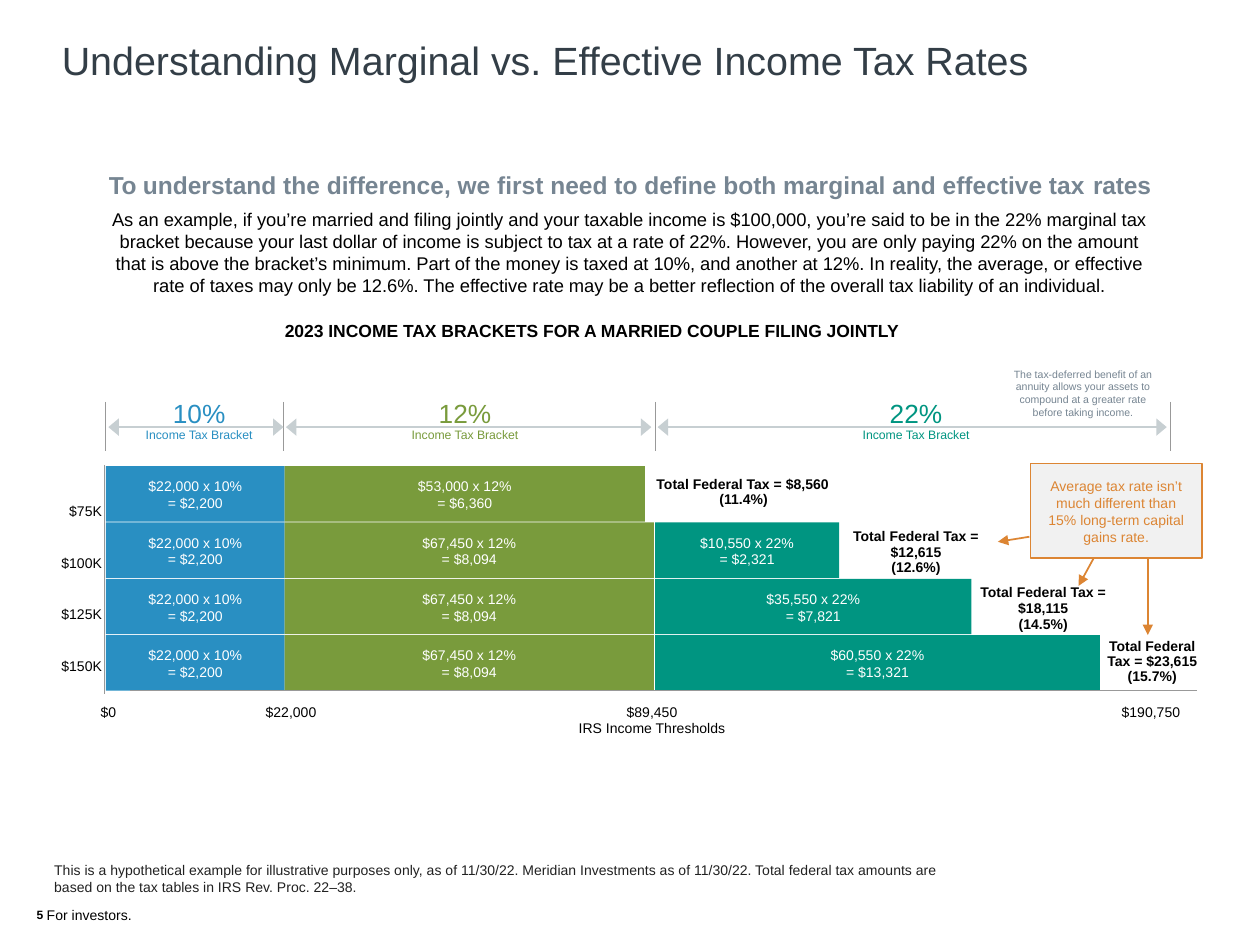
import pptx
import pptx.util
import pptx.dml.color
import pptx.enum.shapes
import pptx.enum.text
import pptx.oxml.ns
from lxml import etree

Inches = pptx.util.Inches
Pt = pptx.util.Pt
ALIGN = pptx.enum.text.PP_ALIGN
HUES = {
    "ink": "000000", "title": "333E47", "note": "212121", "slate": "768592",
    "blue": "298FC2", "green": "799B3C", "teal": "009581", "white": "FFFFFF",
    "amber": "DC8533", "panel": "F1F1F1", "axis": "999999", "arrow": "C7CFD2",
}
BANDS = [("10%", "blue"), ("12%", "green"), ("22%", "teal")]


def tint(name):
    return pptx.dml.color.RGBColor.from_string(HUES[name])


def add_run(para, text, size, hue="ink", bold=False, track=0):
    """Add one run; track is letter spacing in points."""
    run = para.add_run()
    run.text = text
    font = run.font
    font.name, font.size, font.bold = "Arial", Pt(size), bold
    font.color.rgb = tint(hue)
    if track:
        run._r.get_or_add_rPr().set("spc", str(round(track * 100)))
    return run


def add_para(frame, align=ALIGN.CENTER, first=False, left=0, right=0, hang=0):
    """Take the first paragraph or add one, with indents in inches."""
    para = frame.paragraphs[0] if first else frame.add_paragraph()
    para.alignment = align
    props = para._p.get_or_add_pPr()
    for key, value in (("marL", left), ("marR", right), ("indent", hang)):
        if value:
            props.set(key, str(Inches(value)))
    return para


def set_frame(frame, top=0.01, side=0, wrap=True):
    frame.word_wrap = wrap
    frame.margin_left = frame.margin_right = Inches(side)
    frame.margin_top, frame.margin_bottom = Inches(top), 0


def add_box(slide, x, y, w, h, top=0.01, wrap=True):
    box = slide.shapes.add_textbox(Inches(x), Inches(y), Inches(w), Inches(h))
    set_frame(box.text_frame, top, wrap=wrap)
    return box.text_frame


def add_label(slide, x, y, w, h, text, size=8, hue="ink", align=ALIGN.CENTER, wrap=False):
    frame = add_box(slide, x, y, w, h, wrap=wrap)
    add_run(add_para(frame, align, True), text, size, hue)


def add_panel(slide, x, y, w, h, fill, line=None):
    kind = pptx.enum.shapes.MSO_SHAPE.RECTANGLE
    panel = slide.shapes.add_shape(kind, Inches(x), Inches(y), Inches(w), Inches(h))
    panel.shadow.inherit = False
    panel.fill.solid()
    panel.fill.fore_color.rgb = tint(fill)
    if line:
        panel.line.color.rgb = tint(line)
        panel.line.width = Pt(0.75)
    else:
        panel.line.fill.background()
    panel.text_frame.vertical_anchor = pptx.enum.text.MSO_ANCHOR.MIDDLE
    return panel.text_frame


def add_line(slide, x1, y1, x2, y2, hue="axis", width=0.75, ends=(), broad="med"):
    """Draw a straight line; ends names the arrowheads wanted."""
    kind = pptx.enum.shapes.MSO_CONNECTOR.STRAIGHT
    line = slide.shapes.add_connector(kind, Inches(x1), Inches(y1), Inches(x2), Inches(y2))
    line.line.color.rgb = tint(hue)
    line.line.width = Pt(width)
    for end in ends:
        head = etree.SubElement(line.line._get_or_add_ln(), pptx.oxml.ns.qn(f"a:{end}"))
        for key, value in (("type", "triangle"), ("w", broad), ("len", "med")):
            head.set(key, value)
    etree.SubElement(line._element.spPr, pptx.oxml.ns.qn("a:effectLst"))


def add_intro(slide, x, y, w, h):
    frame = add_box(slide, x, y, w, h, top=0.1)
    lead = add_para(frame, first=True)
    add_run(lead, "To ", 14, "slate", True, -0.3)
    add_run(lead, "understand the difference, we first need to define both marginal "
            "and effective tax ", 14, "slate", True)
    add_run(lead, "rates", 14, "slate", True, -0.1)
    body = add_para(frame)
    body.space_before = Pt(4.9)
    add_run(body, "As an example, if you’re married and filing jointly and your taxable income "
            "is $100,000, you’re said to be in the 22% marginal tax bracket because your last "
            "dollar of income is subject to tax at a rate of 22%. However, you are only paying "
            "22% on the amount that is above the bracket’s minimum. Part of the money is taxed "
            "at 10%, and another at 12%. In reality, the average, or effective rate of taxes may "
            "only be 12.6%. The effective rate may be a better reflection of the overall tax "
            "liability of an individual.", 10.5)
    head = add_para(frame, ALIGN.LEFT, left=1.42)
    head.space_before = Pt(13.8)
    add_run(head, "2023 INCOME TAX BRACKETS FOR A MARRIED COUPLE FILING JOINTLY", 10, bold=True)


def add_scale(slide, x, y, h):
    """Draw the bracket spans, with their dividers and rates."""
    stops = [x, x + 1.41, x + 4.36, x + 8.45]
    mids = [1.585, 3.695, 7.275]
    for stop in stops:
        add_line(slide, stop, y, stop, y + h)
    for (rate, hue), start, stop, mid in zip(BANDS, stops, stops[1:], mids):
        reach = stop - 0.03 if hue != "blue" else stop
        add_line(slide, start + 0.02, y + 0.2, reach, y + 0.2, "arrow", 1,
                 ("headEnd", "tailEnd"), "lg")
        add_label(slide, mid - 0.23, y - 0.05, 0.45, 0.28, rate, 15, hue)
        add_label(slide, mid - 0.45, y + 0.19, 0.89, 0.14, "Income Tax Bracket", 7, hue)


def add_bars(slide, x, y):
    starts = [x, x + 1.42, x + 4.36]
    low = ("$22,000", "$2,200", 1.42)
    mid = ("$67,450", "$8,094", 2.93)
    rows = [
        ("$75K", [low, ("$53,000", "$6,360", 2.86)]),
        ("$100K", [low, mid, ("$10,550", "$2,321", 1.46)]),
        ("$125K", [low, mid, ("$35,550", "$7,821", 2.51)]),
        ("$150K", [low, mid, ("$60,550", "$13,321", 3.53)]),
    ]
    for i, (income, parts) in enumerate(rows):
        add_label(slide, x - 0.38, y + 0.28 + 0.41 * i, 0.35, 0.16, income, align=ALIGN.RIGHT)
        for start, (base, tax, width), (rate, hue) in zip(starts, parts, BANDS):
            frame = add_panel(slide, start, y + 0.447 * i, width, 0.44, hue)
            set_frame(frame)
            add_run(add_para(frame, first=True), f"{base} x {rate}", 8, "white")
            add_run(add_para(frame), f"= {tax}", 8, "white")
    add_line(slide, x + 0.19, y + 1.78, x + 8.66, y + 1.78)
    add_line(slide, x - 0.01, y - 0.01, x - 0.01, y + 1.81)
    for gap, text in ((0.02, "$0"), (1.47, "$22,000"), (4.335, "$89,450"), (8.295, "$190,750")):
        add_label(slide, x + gap - 0.25, y + 1.87, 0.5, 0.16, text)
    add_label(slide, x + 3.74, y + 2, 1.19, 0.16, "IRS Income Thresholds")


def add_totals(slide, x, y):
    """Place the total tax beside each bar."""
    frame = add_box(slide, x, y, 1.41, 0.28, top=0.03)
    para = add_para(frame, ALIGN.LEFT, True, left=0.51, hang=-0.5)
    para.line_spacing = Pt(8.6)
    add_run(para, "Total Federal Tax = $8,560 (11.4%)", 8, bold=True)
    for dx, dy, sum_ in ((1.55, 0.42, "$12,615 (12.6%)"), (2.56, 0.87, "$18,115 (14.5%)")):
        frame = add_box(slide, x + dx, y + dy, 1.04, 0.4)
        para = add_para(frame, first=True)
        para.line_spacing = Pt(9.1)
        add_run(para, "Total Federal Tax =", 8, bold=True)
        para = add_para(frame, left=0.25, right=0.25)
        para.line_spacing, para.space_before = Pt(8.6), Pt(0.7)
        add_run(para, sum_, 8, bold=True)
    frame = add_box(slide, x + 3.57, y + 1.28, 0.75, 0.4, top=0.03)
    para = add_para(frame, first=True)
    para.line_spacing = Pt(8.6)
    add_run(para, "Total Federal Tax = $23,615 (15.7%)", 8, bold=True)


def add_callout(slide, x, y, w, h):
    frame = add_panel(slide, x, y, w, h, "panel", "amber")
    set_frame(frame, side=0.12)
    add_run(add_para(frame, first=True), "Average tax rate isn’t much different than "
            "15% long-term capital gains rate.", 8, "amber")
    for x1, y1, x2, y2 in ((-0.01, 0.58, -0.26, 0.62), (0.5, h, 0.38, 0.97), (0.93, h, 0.93, 1.36)):
        add_line(slide, x + x1, y + y1, x + x2, y + y2, "amber", 1, ("tailEnd",))


def add_foot(slide, x, y):
    add_label(slide, x + 0.24, y, 7.02, 0.3, "This is a hypothetical example for illustrative "
              "purposes only, as of 11/30/22. Meridian Investments as of 11/30/22. Total federal "
              "tax amounts are based on the tax tables in IRS Rev. Proc. 22–38.",
              8, "note", ALIGN.LEFT, True)
    frame = add_box(slide, x, y + 0.14, 5.02, 0.32, top=0.17)
    para = add_para(frame, ALIGN.LEFT, True, left=0.1)
    page = add_run(para, "5 ", 12, bold=True)
    page._r.get_or_add_rPr().set("baseline", "3000")
    add_run(para, "For investors.", 8)


def main():
    deck = pptx.Presentation()
    deck.slide_width, deck.slide_height = Inches(10), Inches(7.5)
    slide = deck.slides.add_slide(deck.slide_layouts[6])
    add_label(slide, 0.49, 0.28, 8.88, 0.7, "Understanding Marginal vs. Effective Income Tax Rates",
              22.5, "title", ALIGN.LEFT, True)
    add_intro(slide, 0.84, 1.25, 8.32, 1.48)
    add_scale(slide, 0.84, 3.19, 0.39)
    add_label(slide, 8.03, 2.91, 1.13, 0.43, "The tax-deferred benefit of an annuity allows your "
              "assets to compound at a greater rate before taking income.", 6, "slate", wrap=True)
    add_bars(slide, 0.84, 3.7)
    add_totals(slide, 5.2, 3.76)
    add_callout(slide, 8.18, 3.68, 1.36, 0.75)
    add_foot(slide, 0.19, 6.83)
    deck.save("out.pptx")


if __name__ == "__main__":
    main()
